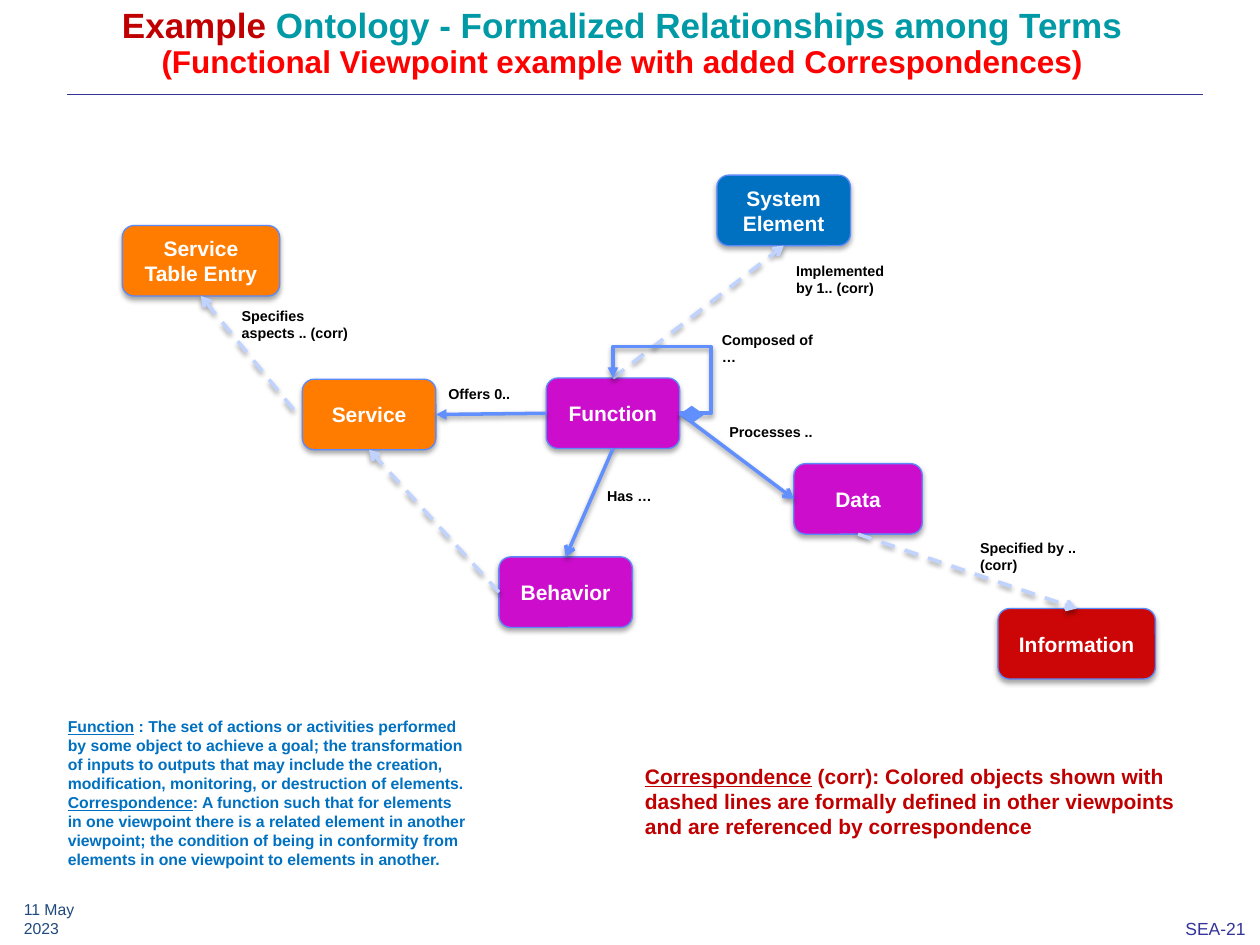
from lxml import etree
from pptx import Presentation
from pptx.dml.color import RGBColor
from pptx.enum.dml import MSO_LINE
from pptx.enum.shapes import MSO_CONNECTOR, MSO_SHAPE
from pptx.enum.text import MSO_ANCHOR, PP_ALIGN
from pptx.oxml.ns import qn
from pptx.util import Inches, Pt

STRAIGHT, ELBOW = MSO_CONNECTOR.STRAIGHT, MSO_CONNECTOR.ELBOW
ROUNDED, DIAMOND = MSO_SHAPE.ROUNDED_RECTANGLE, MSO_SHAPE.FLOWCHART_DECISION
DASH = MSO_LINE.DASH
CENTER, LEFT = PP_ALIGN.CENTER, PP_ALIGN.LEFT
TOP_ANCHOR, MIDDLE = MSO_ANCHOR.TOP, MSO_ANCHOR.MIDDLE
TOP, LEFT_SIDE, BOTTOM, RIGHT_SIDE = range(4)

BLACK = RGBColor(0x00, 0x00, 0x00)
WHITE = RGBColor(0xFF, 0xFF, 0xFF)
DARK_RED = RGBColor(0xC0, 0x00, 0x00)
RED = RGBColor(0xFF, 0x00, 0x00)
TEAL = RGBColor(0x00, 0x99, 0xA6)
BLUE = RGBColor(0x00, 0x70, 0xC0)
NAVY = RGBColor(0x1F, 0x49, 0x7D)
INDIGO = RGBColor(0x33, 0x33, 0x99)
MAGENTA = RGBColor(0xCC, 0x0E, 0xCC)
ORANGE = RGBColor(0xFF, 0x7C, 0x00)
CRIMSON = RGBColor(0xCC, 0x06, 0x06)
BORDER = RGBColor(0x5B, 0x8A, 0xFB)
RELATION = RGBColor(0x61, 0x8F, 0xFD)
CORRESPONDENCE = RGBColor(0xC0, 0xD2, 0xFE)

deck = Presentation()
deck.slide_width, deck.slide_height = Inches(10), Inches(7.5)
page = deck.slides.add_slide(deck.slide_layouts[6])

# Grid of 100 columns by 75 rows
COLUMN = deck.slide_width / 100
ROW = deck.slide_height / 75
BOX_ROWS = 5.6


def write(box, paragraphs, size, align=LEFT, anchor=TOP_ANCHOR, wrap=True, bold=True):
    """Fill a box; each paragraph is a list of (text, colour, underline) runs."""
    frame = box.text_frame
    frame.word_wrap = wrap
    frame.vertical_anchor = anchor
    for index, runs in enumerate(paragraphs):
        para = frame.paragraphs[0] if index == 0 else frame.add_paragraph()
        para.alignment = align
        for text, color, underline in runs:
            span = para.add_run()
            span.text = text
            span.font.name = "Arial"
            span.font.size = Pt(size)
            span.font.bold = bold
            span.font.underline = underline
            span.font.color.rgb = color


def set_shadow(shape, opacity=0, distance=0):
    """Give a shape a soft downward shadow, or none at zero opacity."""
    effects = etree.SubElement(shape._element.spPr, qn("a:effectLst"))
    if opacity:
        shadow = etree.SubElement(effects, qn("a:outerShdw"), blurRad=str(Pt(3.1)),
                                  dist=str(Pt(distance)), dir="5400000", rotWithShape="0")
        color = etree.SubElement(shadow, qn("a:srgbClr"), val="000000")
        etree.SubElement(color, qn("a:alpha"), val=str(opacity * 1000))


# Title and the rule below it
rule = page.shapes.add_connector(STRAIGHT, int(5.3 * COLUMN), int(7.5 * ROW),
                                 int(95.5 * COLUMN), int(7.5 * ROW))
rule.line.color.rgb = INDIGO
rule.line.width = Pt(0.13)
set_shadow(rule)

title = page.shapes.add_textbox(int(4.4 * COLUMN), int(0.2 * ROW), int(90 * COLUMN), int(8.4 * ROW))
write(title, [[("Example", DARK_RED, False),
               (" Ontology - Formalized Relationships among Terms", TEAL, False)]], 20, CENTER)
heading = title.text_frame.paragraphs[0]
heading.line_spacing = 0.9
heading.add_line_break()
subtitle = heading.add_run()
subtitle.text = "(Functional Viewpoint example with added Correspondences)"
subtitle.font.name = "Arial"
subtitle.font.size = Pt(18)
subtitle.font.bold = True
subtitle.font.color.rgb = RED

# Ontology terms: lines of text, column, row, columns wide, fill
terms = {}
for name, lines, left, top, width, fill in (
    ("behavior", ["Behavior"], 39.6, 44.2, 10.6, MAGENTA),
    ("system", ["System", "Element"], 56.9, 13.9, 10.6, BLUE),
    ("function", ["Function"], 43.35, 30, 10.6, MAGENTA),
    ("data", ["Data"], 63, 36.8, 10.2, MAGENTA),
    ("service", ["Service"], 24, 30.1, 10.6, ORANGE),
    ("information", ["Information"], 79.2, 48.3, 12.5, CRIMSON),
    ("entry", ["Service Table Entry"], 9.7, 17.9, 12.5, ORANGE),
):
    box = page.shapes.add_shape(ROUNDED, int(left * COLUMN), int(top * ROW),
                                int(width * COLUMN), int(BOX_ROWS * ROW))
    box.fill.solid()
    box.fill.fore_color.rgb = fill
    box.line.color.rgb = BORDER
    box.line.width = Pt(0.75)
    set_shadow(box, 35, 1.8)
    write(box, [[(line, WHITE, False)] for line in lines], 12, CENTER, MIDDLE)
    terms[name] = box

# Relations are solid, correspondences dashed
for kind, start, start_side, end, end_side, dashed, arrow in (
    (STRAIGHT, "function", RIGHT_SIDE, "data", LEFT_SIDE, False, "arrow"),
    (STRAIGHT, "function", TOP, "system", BOTTOM, True, "arrow"),
    (STRAIGHT, "function", LEFT_SIDE, "service", RIGHT_SIDE, False, "triangle"),
    (STRAIGHT, "function", BOTTOM, "behavior", TOP, False, "arrow"),
    (STRAIGHT, "behavior", LEFT_SIDE, "service", BOTTOM, True, "arrow"),
    (ELBOW, "function", RIGHT_SIDE, "function", TOP, False, "triangle"),
    (STRAIGHT, "data", BOTTOM, "information", TOP, True, "arrow"),
    (STRAIGHT, None, None, "entry", BOTTOM, True, "arrow"),
):
    link = page.shapes.add_connector(kind, int(23.3 * COLUMN), int(32.5 * ROW), 0, 0)
    if start:
        link.begin_connect(terms[start], start_side)
    link.end_connect(terms[end], end_side)
    link.line.color.rgb = CORRESPONDENCE if dashed else RELATION
    link.line.width = Pt(2)
    if dashed:
        link.line.dash_style = DASH
    etree.SubElement(link.line._get_or_add_ln(), qn("a:tailEnd"), type=arrow)
    set_shadow(link, 38, 1.6)
    if kind == ELBOW:
        # Loop out to the right of the box and back above it
        geometry = link._element.spPr.find(qn("a:prstGeom"))
        geometry.set("prst", "bentConnector4")
        guides = geometry.find(qn("a:avLst"))
        for guide, value in (("adj1", -47100), ("adj2", 188900)):
            etree.SubElement(guides, qn("a:gd"), name=guide, fmla=f"val {value}")

# Composition diamond
diamond = page.shapes.add_shape(DIAMOND, int(53.9 * COLUMN), int(32.2 * ROW),
                                int(2 * COLUMN), int(1.4 * ROW))
diamond.fill.solid()
diamond.fill.fore_color.rgb = RELATION
diamond.line.fill.background()
diamond.shadow.inherit = False

# Relation labels: text, column, row, columns wide, rows high, wrapping
for text, left, top, width, height, wrap in (
    ("Processes ..", 56.9, 33.1, 8.8, 2.4, False),
    ("Implemented by 1.. (corr)", 62.2, 20.3, 9.5, 3.8, True),
    ("Offers 0..", 34.6, 30.1, 7.5, 2.4, True),
    ("Has …", 47.2, 38.2, 9.1, 2.4, True),
    ("Composed of …", 56.3, 25.8, 9.5, 3.8, True),
    ("Specified by .. (corr)", 76.8, 42.3, 9.9, 3.8, True),
    ("Specifies aspects .. (corr)", 18.2, 23.9, 11.4, 3.8, True),
):
    label = page.shapes.add_textbox(int(left * COLUMN), int(top * ROW),
                                    int(width * COLUMN), int(height * ROW))
    write(label, [[(text, BLACK, False)]], 8.2, wrap=wrap)

# Definitions
definitions = page.shapes.add_textbox(int(4.4 * COLUMN), int(56.4 * ROW),
                                      int(33.7 * COLUMN), int(13.1 * ROW))
write(definitions, [
    [("Function", BLUE, True),
     (" : The set of actions or activities performed by some object to achieve a goal; "
      "the transformation of inputs to outputs that may include the creation, modification, "
      "monitoring, or destruction of elements.", BLUE, False)],
    [("Correspondence", BLUE, True),
     (": A function such that for elements in one viewpoint there is a related element in "
      "another viewpoint; the condition of being in conformity from elements in one viewpoint "
      "to elements in another.", BLUE, False)],
], 9)

# Legend for the dashed lines
legend = page.shapes.add_textbox(int(45.2 * COLUMN), int(60.1 * ROW),
                                 int(51.5 * COLUMN), int(7.1 * ROW))
write(legend, [[
    ("Correspondence", DARK_RED, True),
    (" (corr): Colored objects shown with dashed lines are formally defined in other viewpoints "
     "and are referenced by correspondence", DARK_RED, False),
]], 12)
indent = legend.text_frame.paragraphs[0]._p.get_or_add_pPr()
indent.set("marL", str(int(5 * COLUMN)))
indent.set("indent", "0")
indent.set("lvl", "1")

# Footer
date = page.shapes.add_textbox(int(0.9 * COLUMN), int(71.5 * ROW), int(8.1 * COLUMN), int(2.8 * ROW))
write(date, [[("11 May 2023", NAVY, False)]], 9, anchor=MIDDLE, wrap=False, bold=False)
number = page.shapes.add_textbox(int(93.1 * COLUMN), int(72.4 * ROW), int(6.8 * COLUMN), int(2.6 * ROW))
write(number, [[("SEA-21", INDIGO, False)]], 10, wrap=False, bold=False)

deck.save("out.pptx")
